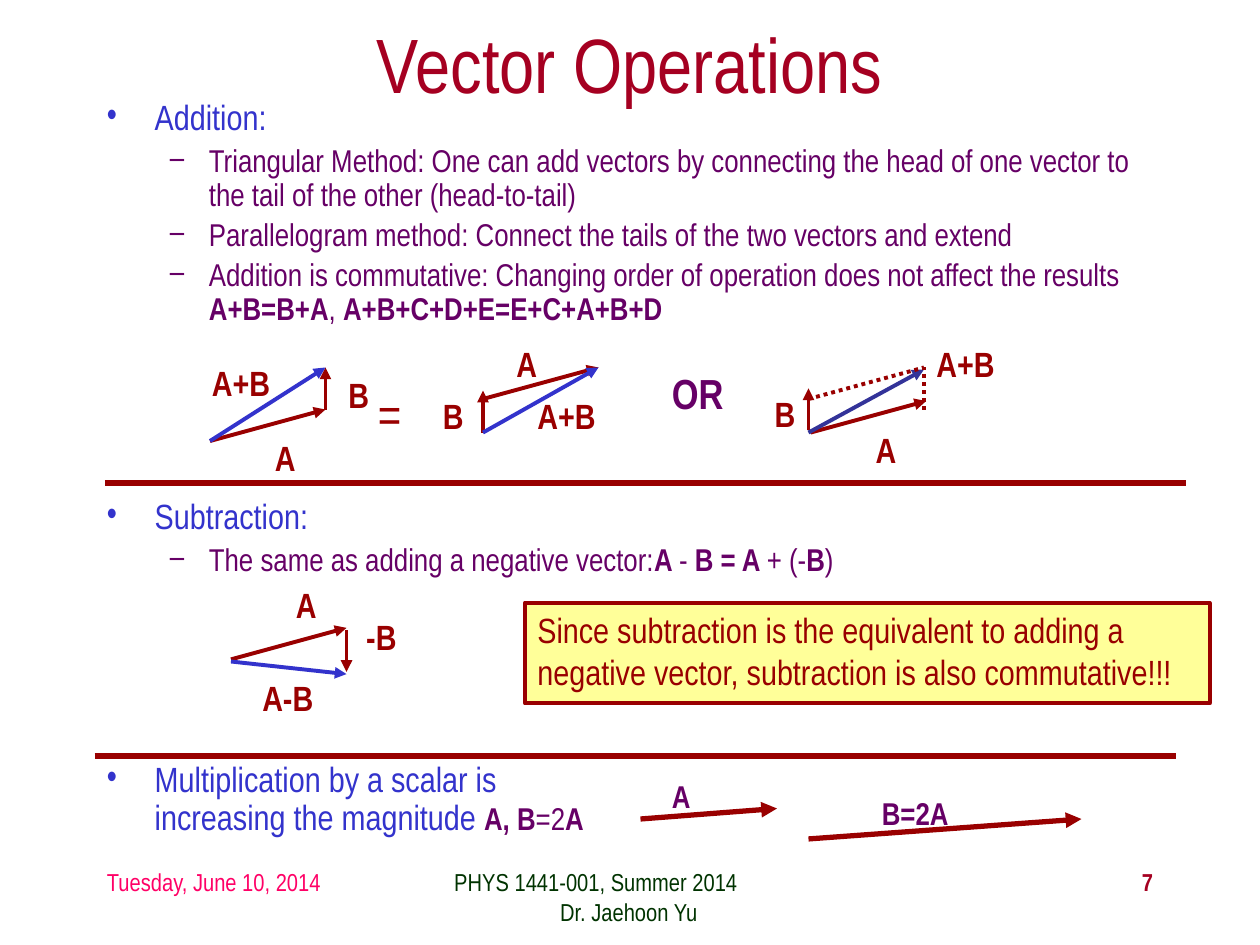
"""Build the Vector Operations slide on a grid of 120 columns by 90 rows."""
from lxml import etree
from pptx import Presentation, util as u
from pptx.dml.color import RGBColor
from pptx.enum import dml, shapes, text
from pptx.oxml.ns import qn

hue = RGBColor.from_string
RED, BLUE, PLUM, WINE = "990000", "3333CC", "660066", "A50021"

deck = Presentation()
deck.slide_width, deck.slide_height = u.Inches(10), u.Inches(7.5)
slide = deck.slides.add_slide(deck.slide_layouts[6])
COL, ROW = deck.slide_width / 120, deck.slide_height / 90


def box(x, y, wide, high, wrap=True):
    item = slide.shapes.add_textbox(int(x * COL), int(y * ROW), int(wide * COL), int(high * ROW))
    item.text_frame.word_wrap = wrap
    return item.text_frame


def write(para, words, size, color, bold=False):
    run = para.add_run()
    run.text = words
    run.font.name, run.font.size, run.font.bold = "Arial Narrow", u.Pt(size), bold
    run.font.color.rgb = hue(color)


frame = box(9, 2, 102, 8)
frame.vertical_anchor = text.MSO_ANCHOR.MIDDLE
frame.paragraphs[0].alignment = text.PP_ALIGN.CENTER
write(frame.paragraphs[0], "Vector Operations", 44, WINE)

lists = [
    (9, 9, 102, 22, [
        (0, [("Addition:", 20, BLUE)]),
        (1, [("Triangular Method: One can add vectors by connecting the head of one vector "
              "to the tail of the other (head-to-tail)", 18, PLUM)]),
        (1, [("Parallelogram method: Connect the tails of the two vectors and extend", 18, PLUM)]),
        (1, [("Addition is commutative: Changing order of operation does not affect the results ",
              18, PLUM),
             ("A+B=B+A", 18, PLUM, True), (", ", 18, PLUM),
             ("A+B+C+D+E=E+C+A+B+D", 18, PLUM, True)]),
    ]),
    (9, 47, 102, 10, [
        (0, [("Subtraction:", 20, BLUE)]),
        (1, [("The same as adding a negative vector:", 18, PLUM), ("A ", 18, PLUM, True),
             ("- ", 18, PLUM), ("B = A ", 18, PLUM, True), ("+ (-", 18, PLUM),
             ("B", 18, PLUM, True), (")", 18, PLUM)]),
    ]),
    (9, 72, 48, 8, [
        (0, [("Multiplication by a scalar is increasing the magnitude ", 20, BLUE),
             ("A, B", 18, PLUM, True), ("=2", 18, PLUM), ("A", 18, PLUM, True)]),
    ]),
]
levels = [("•", 0.38, -0.38), ("–", 0.81, -0.31)]
for *place, items in lists:
    frame = box(*place)
    for rank, (level, runs) in enumerate(items):
        para = frame.add_paragraph() if rank else frame.paragraphs[0]
        mark, left, hang = levels[level]
        props = para._p.get_or_add_pPr()
        props.set("marL", str(u.Inches(left)))
        props.set("indent", str(u.Inches(hang)))
        etree.SubElement(props, qn("a:buFont")).set("typeface", "Arial Narrow")
        etree.SubElement(props, qn("a:buChar")).set("char", mark)
        para.level, para.line_spacing = level, 0.9
        if rank:
            para.space_before = u.Pt(3.6)
        for run in runs:
            write(para, *run)

note = slide.shapes.add_shape(shapes.MSO_SHAPE.RECTANGLE, int(50 * COL), int(57.4 * ROW),
                              int(65.2 * COL), int(9.6 * ROW))
note.shadow.inherit = False
note.fill.solid()
note.fill.fore_color.rgb = hue("FFFF99")
note.line.color.rgb, note.line.width = hue(RED), u.Pt(2.25)
note.text_frame.vertical_anchor = text.MSO_ANCHOR.TOP
note.text_frame.word_wrap = True
para = note.text_frame.paragraphs[0]
para.alignment = text.PP_ALIGN.LEFT
write(para, "Since subtraction is the equivalent to adding a negative vector, "
            "subtraction is also commutative!!!", 20, RED)

strokes = [
    (RED, 2.25, "arrow", [(20, 42, 31, 39), (31, 39, 31, 35), (46, 38, 57, 35),
                          (46, 41.2, 46, 37.2), (77.2, 41.2, 88.2, 38.2), (77, 41, 77, 37),
                          (22, 62.8, 33, 59.8), (33, 60, 33, 64)]),
    ("333399", 2.25, "arrow", [(77, 41.2, 88, 35.2)]),
    (RED, 2.25, "dots", [(88, 39, 88, 35), (77, 38, 88, 35)]),
    (RED, 3, "plain", [(10, 46, 113, 46), (9, 72, 112, 72)]),
    (RED, 3, "arrow", [(61, 78, 74, 77), (77, 79.9, 103, 78)]),
    (BLUE, 2.25, "arrow", [(20, 42, 31, 35), (46, 41.2, 57, 35), (22, 63, 33, 64.2)]),
]
for color, width, kind, ends in strokes:
    for x, y, far, low in ends:
        line = slide.shapes.add_connector(shapes.MSO_CONNECTOR.STRAIGHT, int(x * COL),
                                          int(y * ROW), int(far * COL), int(low * ROW))
        line.line.color.rgb, line.line.width = hue(color), u.Pt(width)
        if kind == "dots":
            line.line.dash_style = dml.MSO_LINE.ROUND_DOT
        if kind == "arrow":
            etree.SubElement(line.line._get_or_add_ln(), qn("a:tailEnd")).set("type", "triangle")
        etree.SubElement(line._element.spPr, qn("a:effectLst"))

labels = [
    (20, RED, True, [("A", 25, 41, 4.4), ("B", 32, 35, 4.4), ("A", 48, 32, 4.4),
                     ("B", 41, 37, 4.4), ("A", 82.2, 40.2, 4.4), ("B", 72.6, 36.8, 4.4),
                     ("A", 27, 55, 4.4), ("-B", 33.7, 58, 5.4), ("A-B", 23.8, 63.8, 7.5),
                     ("A+B", 88, 32, 8.4), ("A+B", 19, 33.8, 8.4), ("A+B", 50, 37, 8.4)]),
    (28, RED, False, [("=", 34.8, 35.9, 4.7)]),
    (18, PLUM, True, [("A", 62.8, 73.4, 4.2), ("B=2A", 82.8, 75, 9)]),
    (24, PLUM, True, [("OR", 62.8, 34.4, 7.5)]),
]
for size, color, bold, spots in labels:
    for words, x, y, wide in spots:
        frame = box(x, y, wide, size / 5 + 1.2, False)
        frame.auto_size = text.MSO_AUTO_SIZE.SHAPE_TO_FIT_TEXT
        write(frame.paragraphs[0], words, size, color, bold)

write(box(9, 82, 25, 6).paragraphs[0], "Tuesday, June 10, 2014", 14, "FF0066")
frame = box(41, 82, 38, 6)
for rank, (words, left) in enumerate([("PHYS 1441-001, Summer 2014", 0.09),
                                      ("Dr. Jaehoon Yu", 0.93)]):
    para = frame.add_paragraph() if rank else frame.paragraphs[0]
    para._p.get_or_add_pPr().set("marL", str(u.Inches(left)))
    write(para, words, 14, "003300")
para = box(86, 82, 25, 6).paragraphs[0]
para.alignment = text.PP_ALIGN.RIGHT
write(para, "7", 14, WINE, True)

deck.save("out.pptx")
